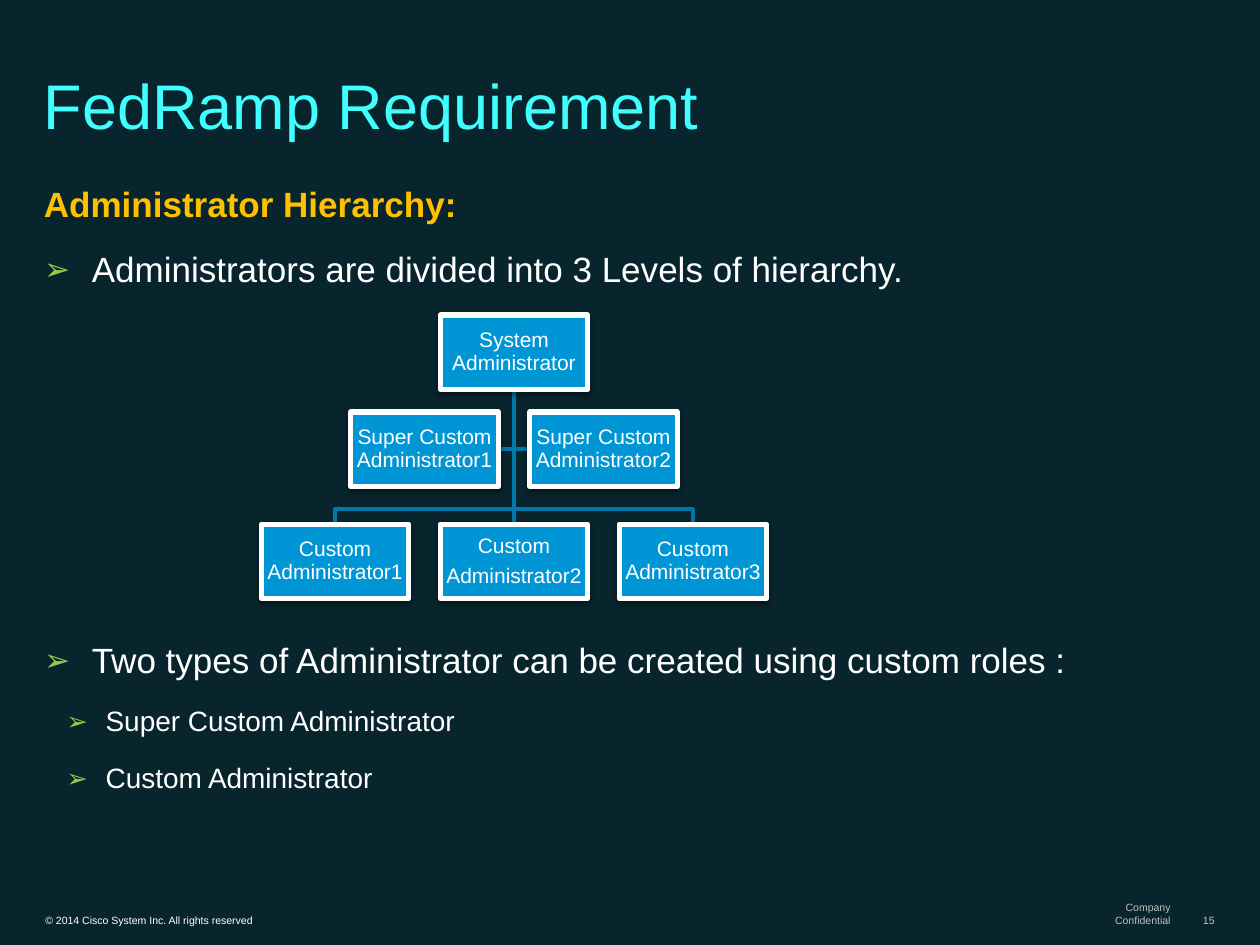
from dataclasses import dataclass

from lxml.etree import SubElement
from pptx import Presentation
from pptx.dml.color import RGBColor
from pptx.enum.shapes import MSO_CONNECTOR, MSO_SHAPE
from pptx.enum.text import MSO_ANCHOR, PP_ALIGN
from pptx.oxml.ns import qn
from pptx.util import Inches, Pt


@dataclass(frozen=True)
class Theme:
    font: str = "Arial"
    background: str = "08252E"
    title: str = "40FFFE"
    heading: str = "FFC000"
    text: str = "FFFFFF"
    muted: str = "C0C0C0"
    bullet: str = "96CA4B"
    box: str = "0096D6"
    line: str = "0078AB"
    shadow: str = "000000"
    title_size: int = 36
    body_size: int = 20
    sub_size: int = 16
    box_size: int = 12
    footer_size: int = 6


def rgb(value):
    return RGBColor.from_string(value)


class Deck:
    def __init__(self, theme):
        self.theme = theme
        self.prs = Presentation()
        self.prs.slide_width, self.prs.slide_height = Inches(10), Inches(7.5)
        self.s = None

    def slide(self):
        self.s = self.prs.slides.add_slide(self.prs.slide_layouts[6])
        fill = self.s.background.fill
        fill.solid()
        fill.fore_color.rgb = rgb(self.theme.background)

    def run(self, p, text, size, color, bold=False):
        r = p.add_run()
        r.text = text
        r.font.name, r.font.size, r.font.bold = self.theme.font, Pt(size), bold
        r.font.color.rgb = rgb(color)

    def frame(self, sp, anchor, inset_x, inset_y, wrap=True):
        tf = sp.text_frame
        tf.word_wrap, tf.vertical_anchor = wrap, anchor
        tf.margin_left = tf.margin_right = Inches(inset_x)
        tf.margin_top = tf.margin_bottom = Inches(inset_y)
        return tf

    def textbox(self, x, y, w, h, anchor, inset_x=0.1, inset_y=0.05, wrap=True):
        sp = self.s.shapes.add_textbox(Inches(x), Inches(y), Inches(w), Inches(h))
        return self.frame(sp, anchor, inset_x, inset_y, wrap)

    def title(self, text):
        p = self.textbox(0.25, 0.25, 9.39, 0.92, MSO_ANCHOR.BOTTOM).paragraphs[0]
        p.line_spacing = 0.8
        self.run(p, text, self.theme.title_size, self.theme.title)

    def footer(self, text, x, w, color, align=PP_ALIGN.LEFT, wrap=True):
        tf = self.textbox(x, 7.2, w, 0.19, MSO_ANCHOR.BOTTOM, 0.09, 0.04, wrap)
        p = tf.paragraphs[0]
        p.alignment = align
        self.run(p, text, self.theme.footer_size, color)

    def bullet(self, p, margin, hanging):
        pPr = p._p.get_or_add_pPr()
        pPr.set("marL", str(Inches(margin)))
        pPr.set("indent", str(-Inches(hanging)))
        color = SubElement(pPr, qn("a:buClr"))
        SubElement(color, qn("a:srgbClr"), val=self.theme.bullet)
        SubElement(pPr, qn("a:buSzPct"), val="90000")
        SubElement(pPr, qn("a:buFont"), typeface=self.theme.font)
        SubElement(pPr, qn("a:buChar"), char="➢")

    def body(self, y, h, items):
        t = self.theme
        tf = self.textbox(0.25, y, 9.35, h, MSO_ANCHOR.TOP)
        for i, (kind, text) in enumerate(items):
            p = tf.add_paragraph() if i else tf.paragraphs[0]
            if kind == "heading":
                self.run(p, text, t.body_size, t.heading, bold=True)
            elif kind == "point":
                self.bullet(p, 0.38, 0.38)
                self.run(p, text, t.body_size, t.text)
            else:
                p.level = 1
                self.bullet(p, 0.49, 0.31)
                self.run(p, text, t.sub_size, t.text)
            p.line_spacing = 0.95
            if i:
                p.space_before = Pt(14.4)

    def shadow(self, sp):
        effects = SubElement(sp._element.spPr, qn("a:effectLst"))
        outer = SubElement(effects, qn("a:outerShdw"), blurRad=str(Pt(3.1)),
                           dist=str(Pt(1.6)), dir="5400000", rotWithShape="0")
        color = SubElement(outer, qn("a:srgbClr"), val=self.theme.shadow)
        SubElement(color, qn("a:alpha"), val="38000")

    def box(self, cx, y, w, h, lines):
        t = self.theme
        sp = self.s.shapes.add_shape(MSO_SHAPE.RECTANGLE, Inches(cx - w / 2),
                                     Inches(y), Inches(w), Inches(h))
        sp.fill.solid()
        sp.fill.fore_color.rgb = rgb(t.box)
        sp.line.color.rgb, sp.line.width = rgb(t.text), Pt(3)
        self.shadow(sp)
        tf = self.frame(sp, MSO_ANCHOR.MIDDLE, 0.01, 0.01)
        for i, text in enumerate(lines):
            p = tf.add_paragraph() if i else tf.paragraphs[0]
            p.alignment, p.line_spacing, p.space_after = PP_ALIGN.CENTER, 0.9, Pt(4.2)
            self.run(p, text, t.box_size, t.text)

    def stroke(self, sp):
        sp.line.color.rgb, sp.line.width = rgb(self.theme.line), Pt(2)

    def straight(self, x1, y1, x2, y2):
        c = self.s.shapes.add_connector(MSO_CONNECTOR.STRAIGHT, Inches(x1),
                                        Inches(y1), Inches(x2), Inches(y2))
        self.stroke(c)
        SubElement(c._element.spPr, qn("a:effectLst"))

    def elbow(self, points):
        points = [(Inches(x), Inches(y)) for x, y in points]
        builder = self.s.shapes.build_freeform(*points[0])
        builder.add_line_segments(points[1:], close=False)
        sp = builder.convert_to_shape()
        sp.fill.background()
        self.stroke(sp)
        sp.shadow.inherit = False


def hierarchy(deck):
    center, pitch, w, h = 4.08, 1.42, 1.17, 0.59
    top, middle, bottom, bus = 2.5, 3.27, 4.16, 4.04
    start, side = top + h, middle + h / 2

    # Lines below the boxes
    for sign in (1, -1):
        inner = center + sign * (pitch - w) / 2
        outer = center + sign * pitch
        deck.elbow([(center, start), (center, side), (inner, side)])
        deck.elbow([(center, start), (center, bus), (outer, bus), (outer, bottom)])
    deck.straight(center, start, center, bottom)

    # Boxes: offset from the trunk in column pitches, top, lines
    for offset, y, lines in (
        (0, top, ["System Administrator"]),
        (-1, bottom, ["Custom Administrator1"]),
        (0, bottom, ["Custom", "Administrator2"]),
        (1, bottom, ["Custom Administrator3"]),
        (-0.5, middle, ["Super Custom Administrator1"]),
        (0.5, middle, ["Super Custom Administrator2"]),
    ):
        deck.box(center + offset * pitch, y, w, h, lines)


def main():
    theme = Theme()
    deck = Deck(theme)
    deck.slide()

    # Footer
    deck.footer("© 2014 Cisco System Inc. All rights reserved", 0.27, 3.74, theme.text)
    deck.footer("Company Confidential", 8.49, 0.89, theme.muted, PP_ALIGN.RIGHT, False)
    deck.footer("15", 9.45, 0.28, theme.muted, PP_ALIGN.RIGHT, False)

    # Title and text
    deck.title("FedRamp Requirement")
    deck.body(1.42, 1, [
        ("heading", "Administrator Hierarchy:"),
        ("point", "Administrators are divided into 3 Levels of hierarchy."),
    ])
    deck.body(5.04, 1.8, [
        ("point", "Two types of Administrator can be created using custom roles :"),
        ("sub", "Super Custom Administrator"),
        ("sub", "Custom Administrator"),
    ])

    # Organisation chart
    hierarchy(deck)
    deck.prs.save("out.pptx")


if __name__ == "__main__":
    main()
